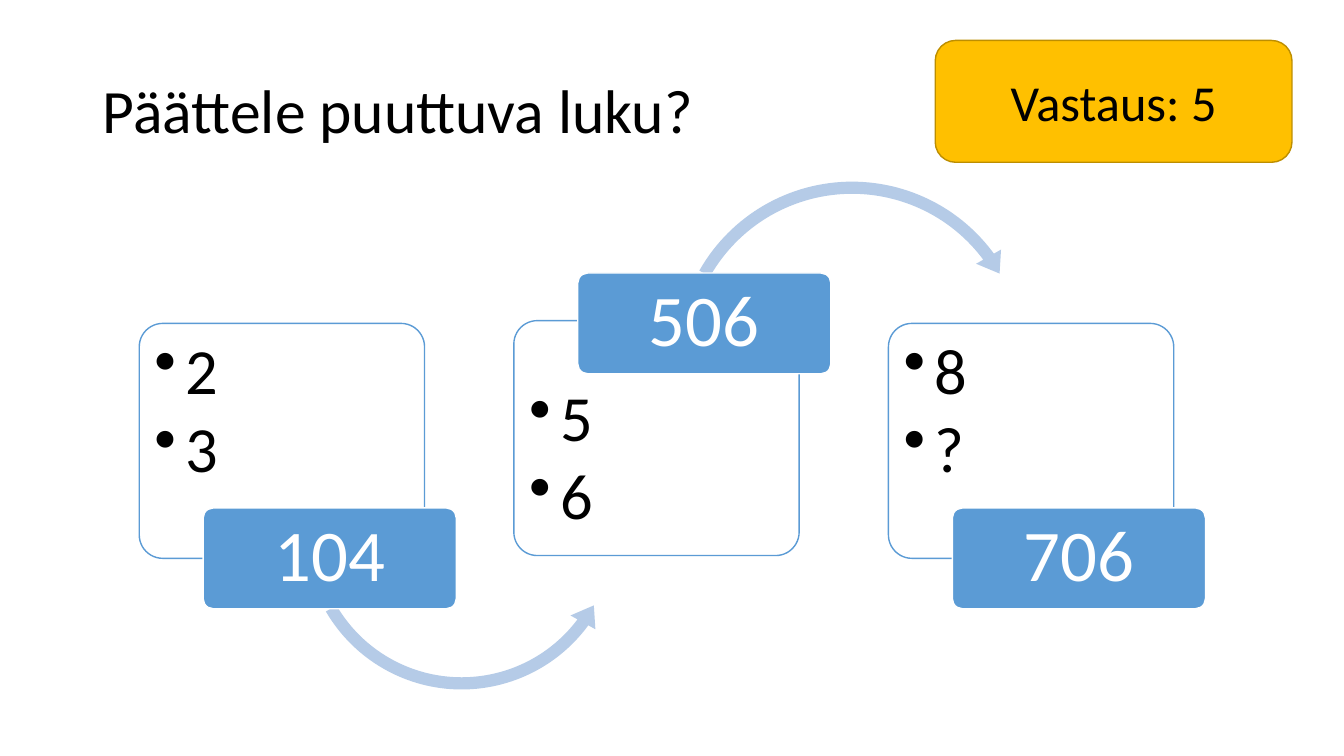
import pptx
import pptx.dml.color
import pptx.enum.shapes
import pptx.enum.text
import pptx.util
from lxml import etree
from pptx.oxml.ns import qn
from pptx.util import Cm, Pt

Shapes = pptx.enum.shapes.MSO_SHAPE
Align = pptx.enum.text.PP_ALIGN
Anchor = pptx.enum.text.MSO_ANCHOR
BLUE, PALE_BLUE, WHITE, BLACK = "5B9BD5", "B5CBE7", "FFFFFF", "000000"


def add_filled_shape(kind, left, top, width, height, fill, line=None, adjustments=()):
    """Add a preset shape, measured in centimetres, without a shadow."""
    shape = slide.shapes.add_shape(kind, Cm(left), Cm(top), Cm(width), Cm(height))
    shape.shadow.inherit = False
    shape.fill.solid()
    shape.fill.fore_color.rgb = pptx.dml.color.RGBColor.from_string(fill)
    if line:
        shape.line.color.rgb = pptx.dml.color.RGBColor.from_string(line)
        shape.line.width = Pt(1)
    else:
        shape.line.fill.background()
    for index, value in enumerate(adjustments):
        shape.adjustments[index] = value
    return shape


def format_paragraph(paragraph, size, color, alignment, line_spacing=0.9):
    paragraph.alignment = alignment
    paragraph.line_spacing = line_spacing
    paragraph.font.name = "Calibri"
    paragraph.font.size = Pt(size)
    paragraph.font.color.rgb = pptx.dml.color.RGBColor.from_string(color)


presentation = pptx.Presentation()
presentation.slide_width = Cm(33.87)
presentation.slide_height = Cm(19.05)
slide = presentation.slides.add_slide(presentation.slide_layouts[5])

title = slide.shapes.title
title.left, title.top, title.width, title.height = Cm(2.34), Cm(1.02), Cm(29.21), Cm(3.68)
title.text_frame.text = "Päättele puuttuva luku?"
title.text_frame.vertical_anchor = Anchor.MIDDLE
title.text_frame.auto_size = pptx.enum.text.MSO_AUTO_SIZE.NONE
format_paragraph(title.text_frame.paragraphs[0], 44, BLACK, Align.LEFT)

# Numbers, result, card top, text inset at the top, result top, arrow to the next card
steps = [
    (("2", "3"), "104", 8.15, 0.21, 12.8,
     (Shapes.LEFT_CIRCULAR_ARROW, 7.47, 9.25, 8.33, (0.037, 4.591, 21.949, 89.848, 0.043))),
    (("5", "6"), "506", 8.08, 1.47, 6.88,
     (Shapes.CIRCULAR_ARROW, 16.84, 4.37, 9.27, (0.033, 4.086, 194.159, 125.755, 0.039))),
    (("8", "?"), "706", 8.15, 0.21, 12.8, None),
]
for index, (numbers, result, card_top, text_inset, result_top, arrow) in enumerate(steps):
    card_left = 3.51 + 9.44 * index
    card = add_filled_shape(Shapes.ROUNDED_RECTANGLE, card_left, card_top, 7.19, 5.92,
                            WHITE, BLUE, [0.1])
    card_color = card.fill._xPr.find(qn("a:solidFill"))[0]
    etree.SubElement(card_color, qn("a:alpha"), val="90000")
    frame = card.text_frame
    frame.vertical_anchor = Anchor.TOP
    frame.margin_left, frame.margin_top = Cm(0.21), Cm(text_inset)
    frame.text = "\n".join(numbers)
    for paragraph in frame.paragraphs:
        paragraph.level = 1
        paragraph.space_after = Pt(6)
        properties = paragraph._p.get_or_add_pPr()
        properties.set("marL", str(Cm(0.79)))
        properties.set("indent", str(-Cm(0.79)))
        format_paragraph(paragraph, 46, BLACK, Align.LEFT)
        bullet = etree.Element(qn("a:buChar"), char="•")
        properties.find(qn("a:defRPr")).addprevious(bullet)

    if arrow:
        kind, left, top, size, adjustments = arrow
        add_filled_shape(kind, left, top, size, size, PALE_BLUE, adjustments=adjustments)

    result_box = add_filled_shape(Shapes.ROUNDED_RECTANGLE, card_left + 1.61, result_top,
                                  6.38, 2.54, BLUE, WHITE, [0.1])
    result_box.text_frame.text = result
    format_paragraph(result_box.text_frame.paragraphs[0], 52, WHITE, Align.CENTER)

answer = add_filled_shape(Shapes.ROUNDED_RECTANGLE, 23.57, 1.02, 8.99, 3.07, "FFC000", "BD8E00")
answer.text_frame.text = "Vastaus: 5"
format_paragraph(answer.text_frame.paragraphs[0], 36, BLACK, Align.CENTER, 1.0)

presentation.save("out.pptx")
